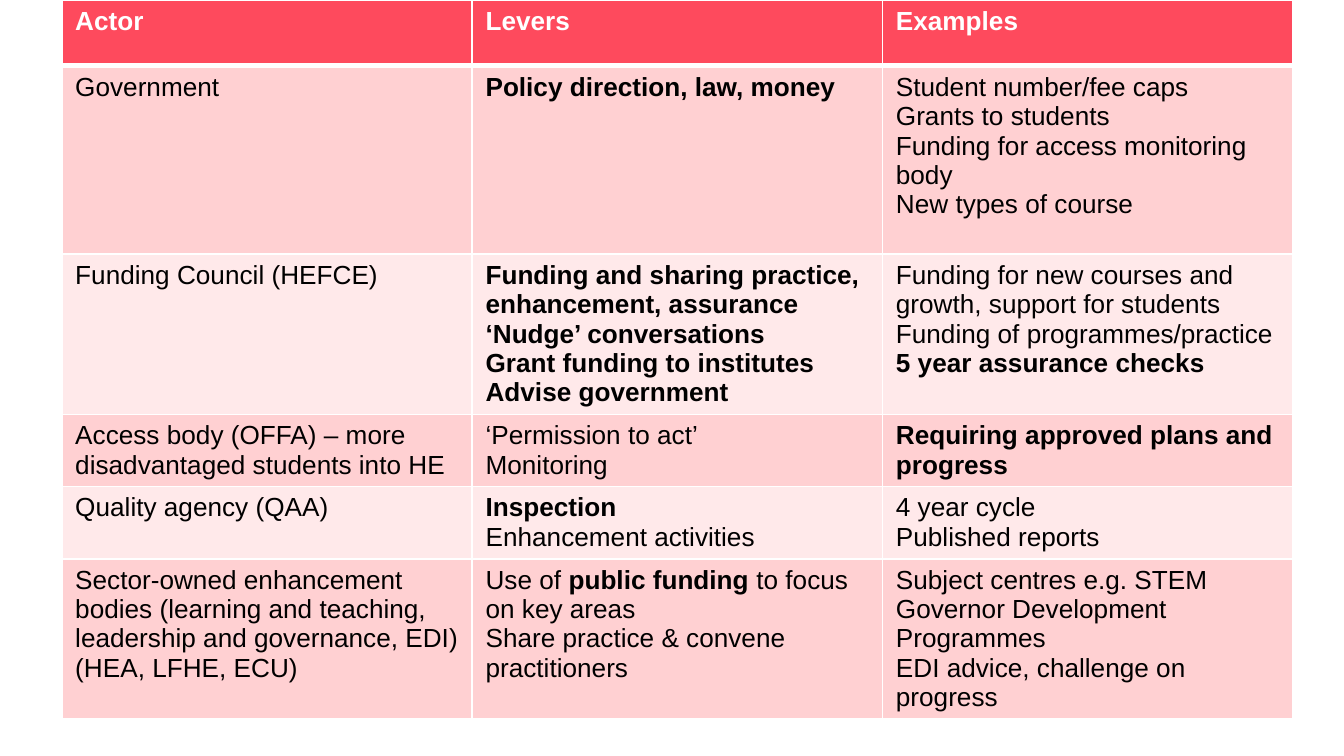
"""Build a slide with a table of higher education actors, levers and examples."""
from lxml import etree
from pptx import Presentation
from pptx.dml.color import RGBColor
from pptx.oxml import ns
from pptx.util import Inches, Pt

WHITE = RGBColor(0xFF, 0xFF, 0xFF)
BLACK = RGBColor(0, 0, 0)
RED = RGBColor(0xFE, 0x4A, 0x5D)
PINK = RGBColor(0xFF, 0xD0, 0xD2)
PALE = RGBColor(0xFF, 0xE9, 0xEA)

HEIGHTS = [0.49, 1.4, 1.19, 0.48, 0.34, 0.34]
ROWS = [
    [["*Actor"], ["*Levers"], ["*Examples"]],
    [["Government"],
     ["*Policy direction, law, money"],
     ["Student number/fee caps", "Grants to students",
      "Funding for access monitoring body", "New types of course"]],
    [["Funding Council (HEFCE)"],
     ["*Funding and sharing practice, enhancement, assurance",
      "*‘Nudge’ conversations", "*Grant funding to institutes",
      "*Advise government"],
     ["Funding for new courses and growth, support for students",
      "Funding of programmes/practice", "*5 year assurance checks"]],
    [["Access body (OFFA) – more disadvantaged students into HE"],
     ["‘Permission to act’", "Monitoring"],
     ["*Requiring approved plans and progress"]],
    [["Quality agency (QAA)"],
     ["*Inspection", "Enhancement activities"],
     ["4 year cycle", "Published reports"]],
    [["Sector-owned enhancement bodies (learning and teaching, "
      "leadership and governance, EDI)", "(HEA, LFHE, ECU)"],
     ["Use of *public funding *to focus on key areas",
      "Share practice & convene practitioners"],
     ["Subject centres e.g. STEM", "Governor Development Programmes",
      "EDI advice, challenge on progress"]],
]


def set_borders(cell, bottom):
    tc_pr = cell._tc.get_or_add_tcPr()
    for i, side in enumerate(["lnL", "lnR", "lnT", "lnB"]):
        width = Pt(bottom if side == "lnB" else 1)
        ln = etree.Element(ns.qn(f"a:{side}"), w=str(width))
        fill = etree.SubElement(ln, ns.qn("a:solidFill"))
        etree.SubElement(fill, ns.qn("a:srgbClr"), val=str(WHITE))
        tc_pr.insert(i, ln)


def add_text(p, line, color):
    parts = [(i % 2 == 1, part) for i, part in enumerate(line.split("*")) if part]
    p.font.name = "Arial"
    p.font.size = Pt(14)
    p.font.color.rgb = color
    if len(parts) == 1:
        p.font.bold = parts[0][0]
    for bold, part in parts:
        r = p.add_run()
        r.text = part
        if len(parts) > 1:
            r.font.bold = bold


prs = Presentation()
prs.slide_width = Inches(10)
prs.slide_height = Inches(45 / 8)
s = prs.slides.add_slide(prs.slide_layouts[6])

sp = s.shapes.add_table(len(ROWS), 3, Inches(0.46), Inches(0),
                        Inches(9.16), Inches(5.55))
table = sp.table
for column in table.columns:
    column.width = Inches(9.16 / 3)

for i, (height, row) in enumerate(zip(HEIGHTS, ROWS)):
    table.rows[i].height = Inches(height)
    for j, lines in enumerate(row):
        cell = table.cell(i, j)
        cell.fill.solid()
        cell.fill.fore_color.rgb = RED if i == 0 else PINK if i % 2 else PALE
        set_borders(cell, 3 if i == 0 else 1)
        tf = cell.text_frame
        for k, line in enumerate(lines):
            p = tf.add_paragraph() if k else tf.paragraphs[0]
            add_text(p, line, BLACK if i else WHITE)
sp.height = Inches(5.55)

prs.save("out.pptx")
